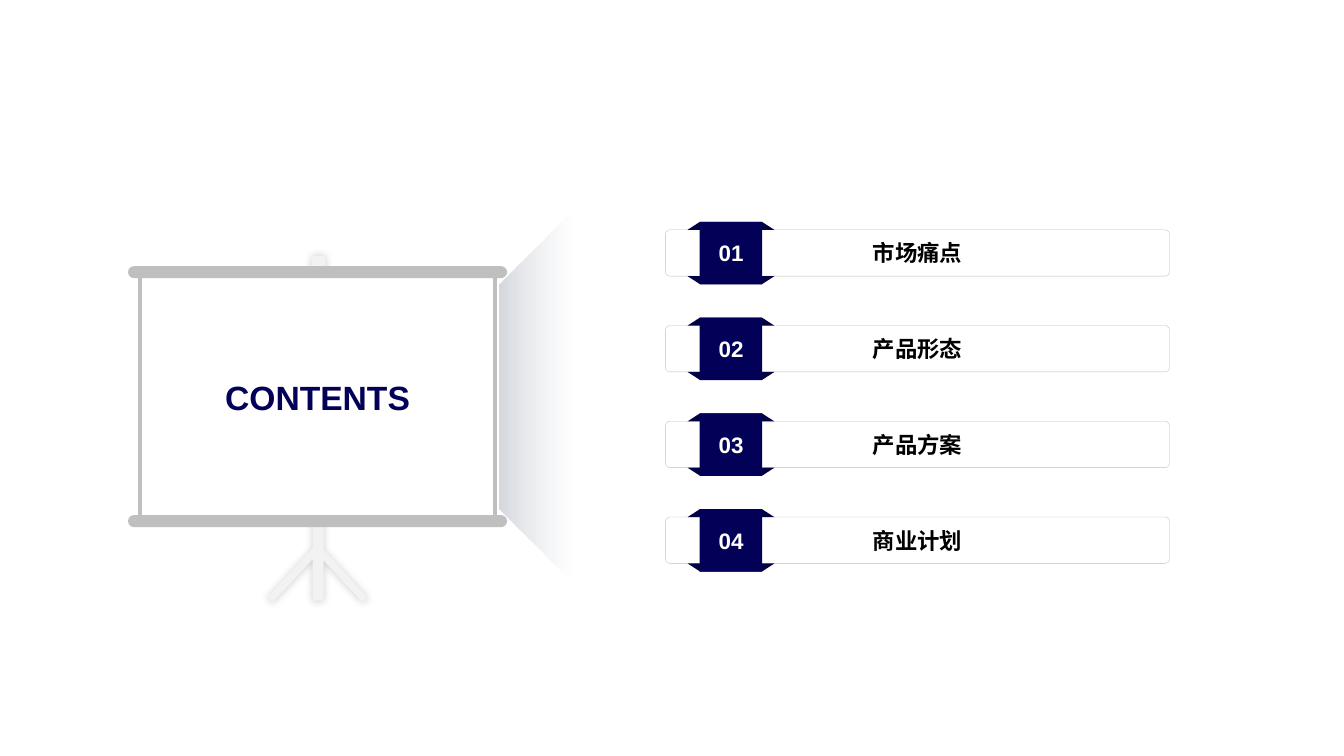
from lxml.etree import SubElement
from pptx import Presentation
from pptx.dml.color import RGBColor
from pptx.enum.shapes import MSO_SHAPE as Kind
from pptx.enum.text import MSO_ANCHOR, PP_ALIGN
from pptx.oxml import parse_xml
from pptx.oxml.ns import nsdecls, qn
from pptx.util import Inches, Pt


def draw(kind, left, top, width, height, color=None):
    shape = slide.shapes.add_shape(
        kind, Inches(left), Inches(top), Inches(width), Inches(height))
    shape.shadow.inherit = False
    shape.line.fill.background()
    if color:
        shape.fill.solid()
        shape.fill.fore_color.rgb = RGBColor.from_string(color)
    else:
        shape.fill.background()
    return shape


def write(shape, text, size, color):
    frame = shape.text_frame
    frame.text = text
    frame.word_wrap = True
    frame.vertical_anchor = MSO_ANCHOR.MIDDLE
    para = frame.paragraphs[0]
    para.alignment = PP_ALIGN.CENTER
    para.font.name = "Arial"
    para.font.size = Pt(size)
    para.font.bold = True
    para.font.color.rgb = RGBColor.from_string(color)


deck = Presentation()
deck.slide_width = Inches(13.33)
deck.slide_height = Inches(7.5)
slide = deck.slides.add_slide(deck.slide_layouts[5])

beam = draw(Kind.TRAPEZOID, 3.47, 3.57, 3.69, 0.72)
beam.rotation = 270
beam.adjustments[0] = 1.013
beam.fill.gradient()
beam.fill.gradient_angle = 270
near, far = beam.fill.gradient_stops
near.position, far.position = 0, 1
near.color.rgb = RGBColor.from_string("D5D9DE")
far.color.rgb = RGBColor.from_string("E5E7EB")
for tint in list(beam.fill._fill._gradFill.iter(qn("a:srgbClr")))[1:]:
    SubElement(tint, qn("a:alpha"), val="0")

post = [(3.09, 2.54), (3.23, 2.54), (3.23, 2.73), (3.09, 2.73)]
legs = [(3.1, 4.94), (3.21, 4.94), (3.21, 5.45), (3.65, 5.93), (3.59, 5.97),
        (3.21, 5.56), (3.21, 5.96), (3.1, 5.96), (3.1, 5.55), (2.71, 5.97),
        (2.65, 5.93), (3.1, 5.44)]
post, legs = [[(Inches(x), Inches(y)) for x, y in part] for part in (post, legs)]
pen = slide.shapes.build_freeform(*post[0])
pen.add_line_segments(post[1:])
pen.move_to(*legs[0])
pen.add_line_segments(legs[1:])
stand = pen.convert_to_shape()
stand.fill.solid()
stand.fill.fore_color.rgb = RGBColor.from_string("F2F2F2")
stand.line.fill.background()
stand.element.spPr.append(parse_xml(
    f'<a:effectLst {nsdecls("a")}><a:outerShdw blurRad="{Pt(6)}" dist="0" '
    'dir="13500000" algn="ctr" rotWithShape="0"><a:srgbClr val="000000">'
    '<a:alpha val="20000"/></a:srgbClr></a:outerShdw></a:effectLst>'))

draw(Kind.RECTANGLE, 1.37, 2.7, 3.56, 2.46, "BFBFBF")
draw(Kind.RECTANGLE, 1.41, 2.75, 3.48, 2.36, "FFFFFF")
for top in (2.64, 5.11):
    bar = draw(Kind.ROUNDED_RECTANGLE, 1.27, top, 3.76, 0.12, "BFBFBF")
    bar.adjustments[0] = 0.5

title = slide.shapes.title
title.left, title.top = Inches(1.81), Inches(3.6)
title.width, title.height = Inches(2.68), Inches(0.67)
write(title, "CONTENTS", 24, "030157")
title.element.getparent().append(title.element)

topics = ["市场痛点", "产品形态", "产品方案", "商业计划"]
for index, topic in enumerate(topics):
    top = 2.2 + 0.95 * index
    box = draw(Kind.ROUNDED_RECTANGLE, 6.6, top + 0.08, 5, 0.46)
    box.adjustments[0] = 0.098
    box.line.color.rgb = RGBColor.from_string("BFBFBF")
    box.line.width = Pt(0.25)
    write(box, topic, 16, "000000")
    for drop, turn in ((0.54, 180), (0, 0)):
        fold = draw(Kind.TRAPEZOID, 6.82, top + drop, 0.86, 0.08, "020141")
        fold.adjustments[0] = 1.546
        fold.rotation = turn
    badge = draw(Kind.RECTANGLE, 6.94, top, 0.62, 0.62, "030157")
    write(badge, f"{index + 1:02}", 16, "FFFFFF")

deck.save("out.pptx")
